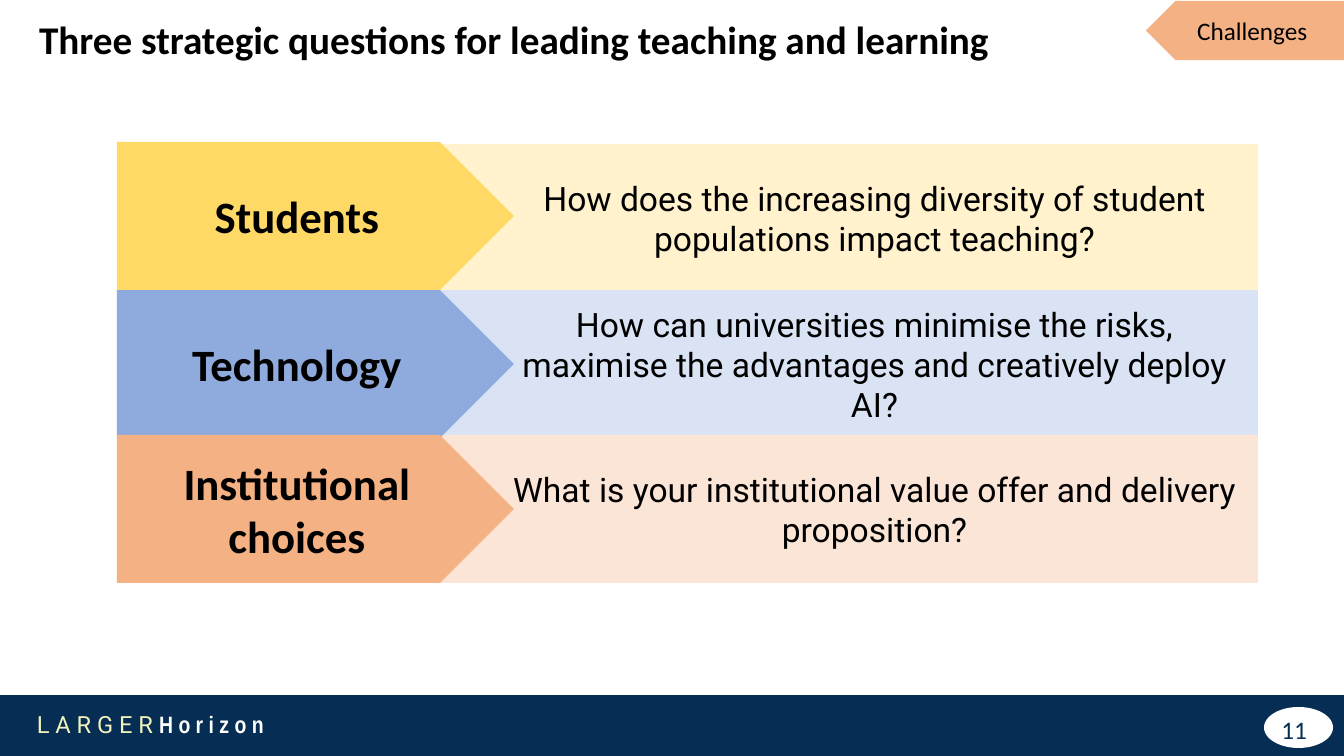
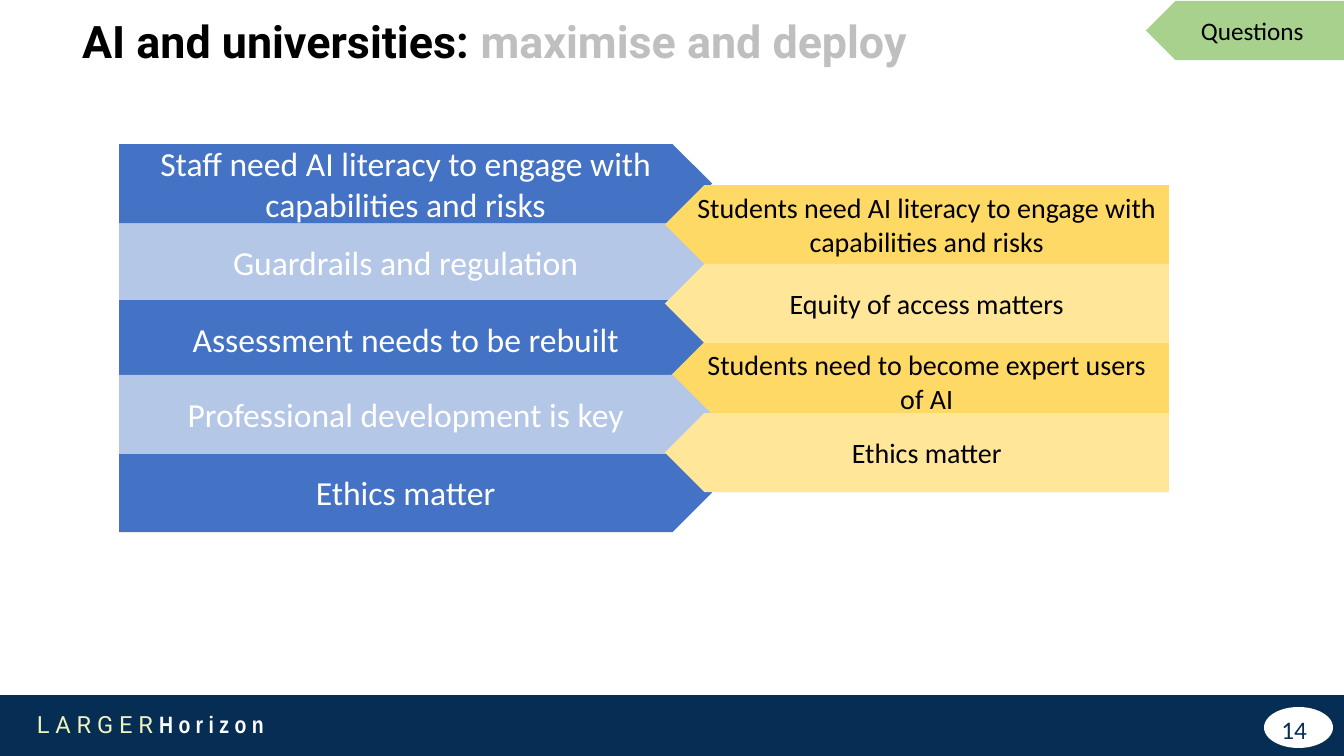
from pptx import Presentation
from pptx.dml.color import RGBColor
from pptx.enum.shapes import MSO_SHAPE as SHAPE
from pptx.enum.text import MSO_ANCHOR as ANCHOR, PP_ALIGN as ALIGN
from pptx.oxml.ns import qn

SLIDE_W, SLIDE_H = 1344, 756
SCALE = 12192000 / SLIDE_W
BLACK, WHITE, NAVY, CREAM, GREY = "000000", "FFFFFF", "062D53", "F0F3BD", "BFBFBF"
ORANGE, GREEN, GOLD, PALE_GOLD = "F4B183", "A9D18E", "FFD966", "FFE699"
BLUE, PALE_BLUE = "4472C4", "B4C7E7"
BODY, ACCENT, NARROW = "Calibri", "Roboto", "Arial Narrow"
INDENT = 72

BRAND = [("L A R G E R ", ACCENT, 16.9, CREAM, False),
         ("H o r i z o n", NARROW, 16.9, WHITE, True)]

STRATEGY = {
    "title": [("Three strategic questions for leading teaching and learning", BODY, 28, BLACK, True)],
    "title_box": (29, 10, 990, 57), "title_indent": 0,
    "tag": ("Challenges", ORANGE), "page": "11",
}
THEMES = [
    ("Students", GOLD, 142,
     "How does the increasing diversity of student populations impact teaching?", "FFF2CC", 144),
    ("Technology", "8FAADC", 290,
     "How can universities minimise the risks, maximise the advantages and creatively deploy AI?", "DAE3F3", 290),
    ("Institutional choices", ORANGE, 435,
     "What is your institutional value offer and delivery proposition?", "FBE5D6", 435),
]

AI_USE = {
    "title": [("AI and universities: ", ACCENT, 32, BLACK, True),
              ("maximise and deploy", ACCENT, 32, GREY, True)],
    "title_box": (0, 9, 1121, 65), "title_indent": INDENT,
    "tag": ("Questions", GREEN), "page": "14",
}
SIDES = {
    "universities": {"left": 119, "width": 593, "size": 24, "ink": WHITE, "flip": False},
    "students": {"left": 665, "width": 504, "size": 20, "ink": BLACK, "flip": True},
}
POINTS = [
    ("universities", 223, PALE_BLUE, "Guardrails and regulation"),
    ("universities", 144, BLUE, "Staff need AI literacy to engage with capabilities and risks"),
    ("universities", 300, BLUE, "Assessment needs to be rebuilt"),
    ("universities", 453, BLUE, "Ethics matter"),
    ("students", 342, GOLD, "Students need to become expert users of AI"),
    ("students", 185, GOLD, "Students need AI literacy to engage with capabilities and risks"),
    ("students", 264, PALE_GOLD, "Equity of access matters"),
    ("universities", 375, PALE_BLUE, "Professional development is key"),
    ("students", 413, PALE_GOLD, "Ethics matter"),
]


def px(length):
    return round(length * SCALE)


def color(value):
    return RGBColor.from_string(value)


def write(frame, runs, align=ALIGN.LEFT, anchor=ANCHOR.TOP, indent=0):
    frame.word_wrap = True
    frame.vertical_anchor = anchor
    paragraph = frame.paragraphs[0]
    paragraph.alignment = align
    if indent:
        properties = paragraph._p.get_or_add_pPr()
        properties.set("marL", str(px(indent)))
        properties.set("indent", "0")
    for text, font, size, ink, bold in runs:
        run = paragraph.add_run()
        run.text = text
        run.font.name = font
        run.font.size = round(size * 12700)
        run.font.bold = bold
        run.font.color.rgb = color(ink)


def block(slide, kind, box, fill, runs=(), indent=0, flip=False):
    shape = slide.shapes.add_shape(kind, *map(px, box))
    shape.shadow.inherit = False
    shape.fill.solid()
    shape.fill.fore_color.rgb = color(fill)
    shape.line.fill.background()
    if flip:
        shape.element.spPr.find(qn("a:xfrm")).set("flipH", "1")
    write(shape.text_frame, runs, ALIGN.CENTER, ANCHOR.MIDDLE, indent)


def label(slide, box, runs, align=ALIGN.LEFT):
    write(slide.shapes.add_textbox(*map(px, box)).text_frame, runs, align)


def framed_slide(deck, content):
    slide = deck.slides.add_slide(deck.slide_layouts[5])
    title = slide.shapes.title
    title.left, title.top, title.width, title.height = map(px, content["title_box"])
    write(title.text_frame, content["title"], indent=content["title_indent"])
    block(slide, SHAPE.RECTANGLE, (0, 695, SLIDE_W, 61), NAVY)
    label(slide, (27, 705, 260, 60), BRAND)
    block(slide, SHAPE.OVAL, (1264, 707, 69, 41), WHITE)
    label(slide, (1015, 709, 302, 40), [(content["page"], BODY, 18, NAVY, False)], ALIGN.RIGHT)
    tag, fill = content["tag"]
    block(slide, SHAPE.PENTAGON, (1146, 1, 198, 59), fill, [(tag, BODY, 18, BLACK, False)], flip=True)
    return slide


def strategy_slide(deck):
    slide = framed_slide(deck, STRATEGY)
    for _, _, _, question, fill, top in THEMES:
        block(slide, SHAPE.RECTANGLE, (419, top, 839, 148), fill,
              [(question, ACCENT, 24, BLACK, False)], INDENT)
    for theme, fill, top, *_ in THEMES:
        block(slide, SHAPE.PENTAGON, (117, top, 397, 148), fill, [(theme, BODY, 32, BLACK, True)])


def ai_slide(deck):
    slide = framed_slide(deck, AI_USE)
    for side_name, top, fill, point in POINTS:
        side = SIDES[side_name]
        block(slide, SHAPE.PENTAGON, (side["left"], top, side["width"], 79), fill,
              [(point, BODY, side["size"], side["ink"], False)], flip=side["flip"])


def main():
    deck = Presentation()
    deck.slide_width, deck.slide_height = px(SLIDE_W), px(SLIDE_H)
    strategy_slide(deck)
    ai_slide(deck)
    deck.save("out.pptx")


if __name__ == "__main__":
    main()
